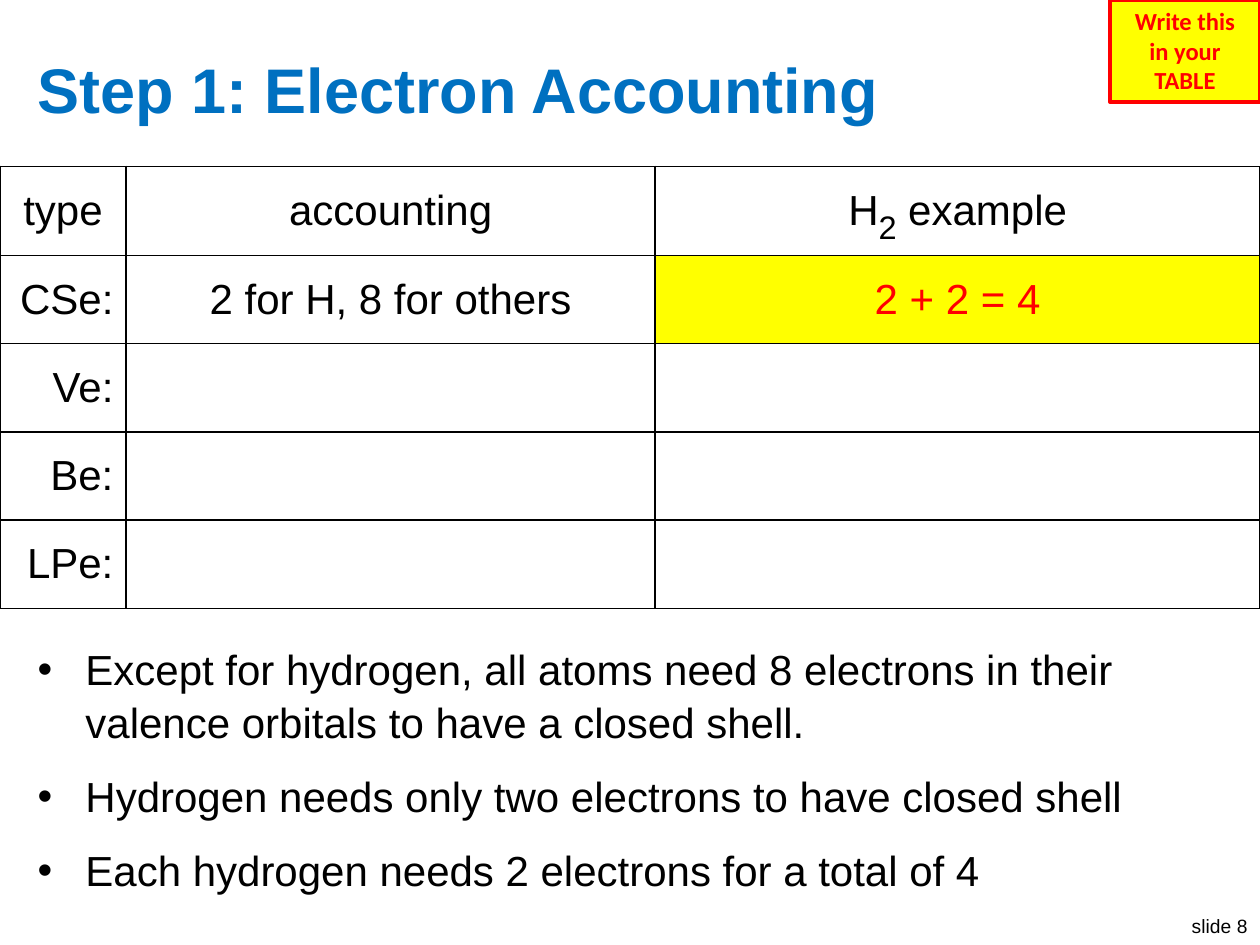
import lxml.etree
import pptx
import pptx.dml.color
import pptx.enum.shapes
import pptx.enum.text
import pptx.oxml.ns
import pptx.util

Inches, Pt = pptx.util.Inches, pptx.util.Pt
RGBColor = pptx.dml.color.RGBColor
ALIGN = pptx.enum.text.PP_ALIGN
ANCHOR = pptx.enum.text.MSO_ANCHOR
qn = pptx.oxml.ns.qn

BLACK = RGBColor(0, 0, 0)
WHITE = RGBColor(255, 255, 255)
BLUE = RGBColor(0, 0x70, 0xC0)
RED = RGBColor(255, 0, 0)
YELLOW = RGBColor(255, 255, 0)


class SlideBuilder:
    font = "Arial"
    body_size = 24

    def __init__(self, s):
        self.s = s

    def style(self, p, size=body_size, color=BLACK, bold=False, font=font, align=ALIGN.LEFT):
        p.alignment = align
        for r in p.runs:
            r.font.name = font
            r.font.size = Pt(size)
            r.font.bold = bold
            r.font.color.rgb = color

    def text(self, box, text, anchor=ANCHOR.TOP, wrap=True, **style):
        sp = self.s.shapes.add_textbox(*map(Inches, box))
        tf = sp.text_frame
        tf.word_wrap = wrap
        tf.vertical_anchor = anchor
        tf.text = text
        for p in tf.paragraphs:
            self.style(p, **style)
        return tf

    def bullets(self, box, items):
        for p in self.text(box, "\n".join(items)).paragraphs:
            p.space_before = Pt(12)
            p.line_spacing = 1.05
            pPr = p._p.get_or_add_pPr()
            pPr.set("marL", str(Inches(0.38)))
            pPr.set("indent", str(Inches(-0.38)))
            lxml.etree.SubElement(pPr, qn("a:buFont"), typeface="Arial")
            lxml.etree.SubElement(pPr, qn("a:buChar"), char="•")

    def note(self, box, text):
        sp = self.s.shapes.add_shape(
            pptx.enum.shapes.MSO_SHAPE.RECTANGLE, *map(Inches, box))
        sp.shadow.inherit = False
        sp.fill.solid()
        sp.fill.fore_color.rgb = YELLOW
        sp.line.color.rgb = RED
        sp.line.width = Pt(2.25)
        tf = sp.text_frame
        tf.word_wrap = True
        tf.vertical_anchor = ANCHOR.TOP
        tf.text = text
        for p in tf.paragraphs:
            self.style(p, 14, RED, True, "Calibri", ALIGN.CENTER)

    def border(self, cell):
        tcPr = cell._tc.get_or_add_tcPr()
        for i, side in enumerate(("a:lnL", "a:lnR", "a:lnT", "a:lnB")):
            ln = lxml.etree.Element(qn(side), w=str(Pt(1)))
            fill = lxml.etree.SubElement(ln, qn("a:solidFill"))
            lxml.etree.SubElement(fill, qn("a:srgbClr"), val=str(BLACK))
            tcPr.insert(i, ln)

    def table(self, left, top, widths, row_height, rows, answer):
        """Bordered grid; answer is the (row, column) of the highlighted cell."""
        table = self.s.shapes.add_table(
            len(rows), len(widths), Inches(left), Inches(top),
            Inches(sum(widths)), Inches(row_height * len(rows))).table
        for col, width in zip(table.columns, widths):
            col.width = Inches(width)
        for i, row in enumerate(rows):
            table.rows[i].height = Inches(row_height)
            for j, text in enumerate(row):
                cell = table.cell(i, j)
                marked = (i, j) == answer
                cell.fill.solid()
                cell.fill.fore_color.rgb = YELLOW if marked else WHITE
                self.border(cell)
                cell.vertical_anchor = ANCHOR.MIDDLE
                cell.text = text
                self.style(cell.text_frame.paragraphs[0],
                           color=RED if marked else BLACK,
                           align=ALIGN.RIGHT if i and j == 0 else ALIGN.CENTER)
        return table

    def formula_heading(self, cell, parts):
        """Fill a cell with base text, subscript and remaining text."""
        p = cell.text_frame.paragraphs[0]
        for text in parts:
            p.add_run().text = text
        self.style(p, align=ALIGN.CENTER)
        sub = p.runs[1].font
        sub.size = Pt(32)
        sub._element.set("baseline", "-25000")


def main():
    prs = pptx.Presentation()
    prs.slide_width, prs.slide_height = Inches(10), Inches(7.5)
    slide = SlideBuilder(prs.slides.add_slide(prs.slide_layouts[6]))

    slide.text((9.25, 7.21, 0.75, 0.29), "slide 8", wrap=False, size=11, align=ALIGN.RIGHT)
    slide.text((0.2, 0.3, 9.6, 0.8), "Step 1: Electron Accounting",
               ANCHOR.MIDDLE, size=36, color=BLUE, bold=True)
    slide.bullets((0.2, 5.04, 9.6, 2.22), [
        "Except for hydrogen, all atoms need 8 electrons in their "
        "valence orbitals to have a closed shell.",
        "Hydrogen needs only two electrons to have closed shell",
        "Each hydrogen needs 2 electrons for a total of 4",
    ])
    table = slide.table(0, 1.32, (1, 4.2, 4.8), 0.7, [
        ("type", "accounting", ""),
        ("CSe:", "2 for H, 8 for others", "2 + 2 = 4"),
        ("Ve:", "", ""),
        ("Be:", "", ""),
        ("LPe:", "", ""),
    ], answer=(1, 2))
    slide.formula_heading(table.cell(0, 2), ("H", "2", " example"))
    slide.note((8.81, 0, 1.19, 0.81), "Write this\nin your TABLE")

    prs.save("out.pptx")


if __name__ == "__main__":
    main()
